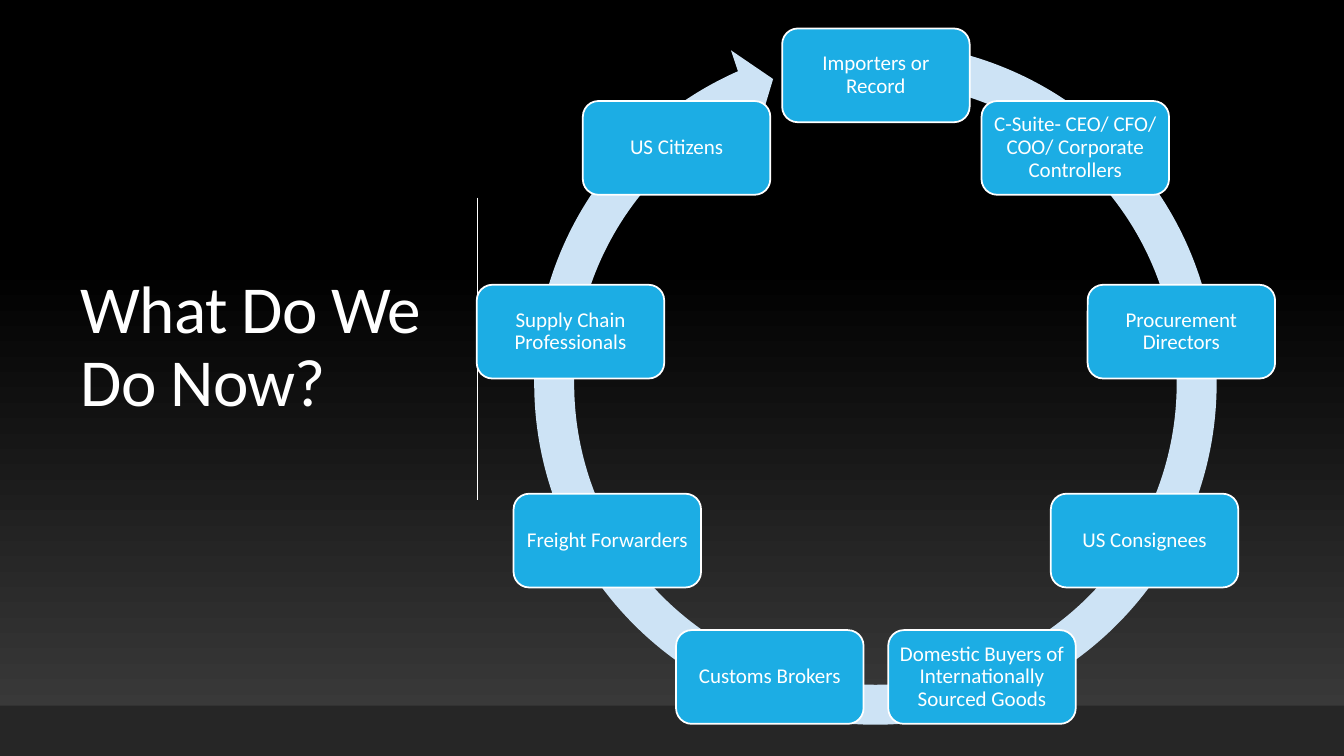
"""Build the slide with a title beside a ring of nine groups."""
import dataclasses
import math
import typing

import lxml.etree
import pptx
import pptx.dml.color
import pptx.enum.shapes
import pptx.enum.text
import pptx.oxml.ns
import pptx.shapes.autoshape
import pptx.slide
import pptx.text.text
import pptx.util

Kind = pptx.enum.shapes.MSO_SHAPE
Align = pptx.enum.text.PP_ALIGN
Color = pptx.dml.color.RGBColor


@dataclasses.dataclass(frozen=True)
class Theme:
    font: str = "Calibri"
    white: str = "FFFFFF"
    black: str = "000000"
    gray: str = "3F3F3F"
    floor: str = "262626"
    blue: str = "1CADE4"
    pale: str = "CDE3F5"
    head: int = 48
    label: int = 15
    rule: float = 1
    edge: float = 1.25


@dataclasses.dataclass(frozen=True)
class Box:
    col: float
    row: float
    wide: float
    high: float

    def place(self) -> tuple[int, ...]:
        return tuple(map(cell, (self.col, self.row, self.wide, self.high)))


@dataclasses.dataclass(frozen=True)
class Ring:
    col: float
    row: float
    reach: float
    wide: float
    high: float

    def node(self, turn: float) -> Box:
        angle = math.tau * turn
        col = self.col + self.reach * math.sin(angle)
        row = self.row - self.reach * math.cos(angle)
        return Box(col - self.wide / 2, row - self.high / 2, self.wide, self.high)


THEME = Theme()
COLS, ROWS = 133.33, 75
TITLE = Box(7, 6.9, 36.9, 55.3)
FLOOR = Box(0, 70, COLS, 5)
ARROW = Box(50.8, 2, 72.1, 72.1)
RULE = Box(47.4, 19.6, 0, 30)
RING = Ring(86.9, 38.25, 30.77, 18.6, 9.3)
BENDS = (0.055, 3.307, 147.55, 168.145, 0.058)
GROUPS = (
    "Importers or Record",
    "C-Suite- CEO/ CFO/ COO/ Corporate Controllers",
    "Procurement Directors",
    "US Consignees",
    "Domestic Buyers of Internationally Sourced Goods",
    "Customs Brokers",
    "Freight Forwarders",
    "Supply Chain Professionals",
    "US Citizens",
)


def cell(count: float) -> int:
    return pptx.util.Inches(count / 10)


def apply(item: typing.Any, values: dict[str, typing.Any]) -> None:
    for name, value in values.items():
        setattr(item, name, value)


def write(frame: pptx.text.text.TextFrame, text: str, size: int, align: Align, pad: dict[str, int]) -> None:
    apply(frame, {
        "text": text,
        "word_wrap": True,
        "auto_size": pptx.enum.text.MSO_AUTO_SIZE.NONE,
        "vertical_anchor": pptx.enum.text.MSO_ANCHOR.MIDDLE,
        **pad,
    })
    para = frame.paragraphs[0]
    apply(para, {"alignment": align, "line_spacing": 0.9})
    font = para.runs[0].font
    apply(font, {"name": THEME.font, "size": pptx.util.Pt(size)})
    font.color.rgb = Color.from_string(THEME.white)


def draw(shapes: typing.Any, kind: Kind, box: Box, fill: str, edge: float = 0) -> pptx.shapes.autoshape.Shape:
    shape = shapes.add_shape(kind, *box.place())
    shape.shadow.inherit = False
    shape.fill.solid()
    shape.fill.fore_color.rgb = Color.from_string(fill)
    if edge:
        shape.line.color.rgb = Color.from_string(THEME.white)
        shape.line.width = pptx.util.Pt(edge)
    else:
        shape.line.fill.background()
    return shape


def shade(slide: pptx.slide.Slide) -> None:
    fill = slide.background.fill
    fill.gradient()
    fill.gradient_angle = 90
    tones = ((0, THEME.gray), (0.65, THEME.black))
    for stop, (spot, tone) in zip(fill.gradient_stops, tones):
        stop.position = spot
        stop.color.rgb = Color.from_string(tone)


def head(slide: pptx.slide.Slide) -> None:
    title = slide.shapes.title
    apply(title, dict(zip(("left", "top", "width", "height"), TITLE.place())))
    write(title.text_frame, "What Do We Do Now?", THEME.head, Align.LEFT, {})
    run = title.text_frame.paragraphs[0].runs[0]
    run._r.get_or_add_rPr().set("spc", "-50")


def rule(slide: pptx.slide.Slide) -> None:
    left, top, wide, high = RULE.place()
    line = slide.shapes.add_connector(
        pptx.enum.shapes.MSO_CONNECTOR.STRAIGHT, left, top, left + wide, top + high)
    line.line.color.rgb = Color.from_string(THEME.white)
    line.line.width = pptx.util.Pt(THEME.rule)
    lxml.etree.SubElement(line._element.spPr, pptx.oxml.ns.qn("a:effectLst"))


def cycle(slide: pptx.slide.Slide) -> None:
    group = slide.shapes.add_group_shape().shapes
    arrow = draw(group, Kind.CIRCULAR_ARROW, ARROW, THEME.pale)
    for index, bend in enumerate(BENDS):
        arrow.adjustments[index] = bend
    sides = ("left", "top", "right", "bottom")
    pad = {f"margin_{side}": cell(0.6) for side in sides}
    for index, text in enumerate(GROUPS):
        box = RING.node(index / len(GROUPS))
        node = draw(group, Kind.ROUNDED_RECTANGLE, box, THEME.blue, THEME.edge)
        write(node.text_frame, text, THEME.label, Align.CENTER, pad)


def main() -> None:
    deck = pptx.Presentation()
    apply(deck, {"slide_width": cell(COLS), "slide_height": cell(ROWS)})
    slide = deck.slides.add_slide(deck.slide_layouts.get_by_name("Title Only"))
    shade(slide)
    head(slide)
    rule(slide)
    draw(slide.shapes, Kind.RECTANGLE, FLOOR, THEME.floor)
    cycle(slide)
    deck.save("out.pptx")


if __name__ == "__main__":
    main()
